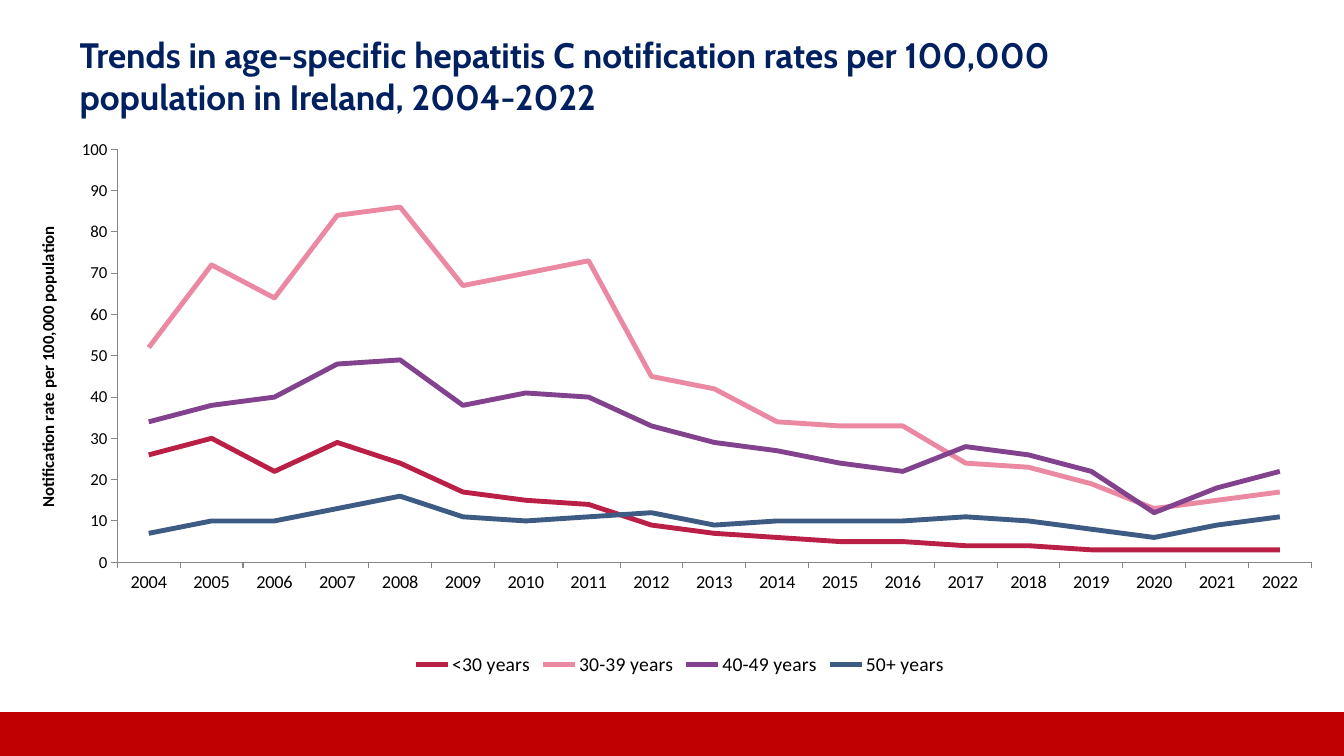
from dataclasses import dataclass

from lxml.etree import SubElement
from pptx import Presentation
from pptx.chart.data import CategoryChartData
from pptx.dml.color import RGBColor
from pptx.enum.chart import XL_CHART_TYPE, XL_LEGEND_POSITION, XL_TICK_MARK
from pptx.enum.shapes import MSO_SHAPE
from pptx.enum.text import MSO_ANCHOR, MSO_AUTO_SIZE, PP_ALIGN
from pptx.oxml.ns import qn
from pptx.util import Inches, Pt

YEARS = [str(year) for year in range(2004, 2023)]
RATES = {
    "<30 years": (26, 30, 22, 29, 24, 17, 15, 14, 9, 7, 6, 5, 5, 4, 4, 3, 3, 3, 3),
    "30-39 years": (52, 72, 64, 84, 86, 67, 70, 73, 45, 42, 34, 33, 33, 24, 23, 19, 13, 15, 17),
    "40-49 years": (34, 38, 40, 48, 49, 38, 41, 40, 33, 29, 27, 24, 22, 28, 26, 22, 12, 18, 22),
    "50+ years": (7, 10, 10, 13, 16, 11, 10, 11, 12, 9, 10, 10, 10, 11, 10, 8, 6, 9, 11),
}


@dataclass(frozen=True)
class Theme:
    title_font: str = "Cabin"
    chart_font: str = "Calibri"
    title: str = "002060"
    text: str = "000000"
    band: str = "C00000"
    axis: str = "868686"
    series: tuple = ("BA1F46", "EB89A3", "82428D", "3E5B84")
    title_size: float = 25.2
    category_size: float = 13
    value_size: float = 12
    legend_size: float = 14
    series_width: float = 3.5


def set_attrs(target, values):
    for name, value in values.items():
        setattr(target, name, value)


def set_font(font, name, size, color, bold=False):
    set_attrs(font, {"name": name, "size": Pt(size), "bold": bold})
    font.color.rgb = RGBColor.from_string(color)


def set_plot_area(chart, x, y, w, h):
    """Fix the inner plot area as fractions of the chart frame."""
    area = chart._chartSpace.chart.plotArea
    for old in area.findall(qn("c:layout")):
        area.remove(old)
    layout = SubElement(area, qn("c:layout"))
    area.insert(0, layout)
    manual = SubElement(layout, qn("c:manualLayout"))
    values = {"layoutTarget": "inner", "xMode": "edge", "yMode": "edge",
              "x": x, "y": y, "w": w, "h": h}
    for tag, value in values.items():
        SubElement(manual, qn(f"c:{tag}")).set("val", str(value))


class SlideBuilder:
    def __init__(self, prs, theme):
        self.theme = theme
        self.s = prs.slides.add_slide(prs.slide_layouts[5])

    def band(self, x, y, w, h):
        sp = self.s.shapes.add_shape(
            MSO_SHAPE.RECTANGLE, Inches(x), Inches(y), Inches(w), Inches(h))
        sp.shadow.inherit = False
        sp.fill.solid()
        sp.fill.fore_color.rgb = RGBColor.from_string(self.theme.band)
        sp.line.color.rgb = RGBColor.from_string(self.theme.band)
        sp.line.width = Pt(2)

    def title(self, text, x, y, w, h):
        sp = self.s.shapes.title
        set_attrs(sp, {"left": Inches(x), "top": Inches(y),
                       "width": Inches(w), "height": Inches(h)})
        tf = sp.text_frame
        set_attrs(tf, {
            "word_wrap": True, "auto_size": MSO_AUTO_SIZE.NONE,
            "vertical_anchor": MSO_ANCHOR.MIDDLE,
            "margin_left": Inches(0.12), "margin_right": Inches(0.12),
            "margin_top": Inches(0.06), "margin_bottom": Inches(0.06)})
        p = tf.paragraphs[0]
        p.alignment = PP_ALIGN.LEFT
        r = p.add_run()
        r.text = text
        set_font(r.font, self.theme.title_font, self.theme.title_size,
                 self.theme.title, True)

    def axis(self, axis, size):
        set_attrs(axis, {"has_major_gridlines": False,
                         "major_tick_mark": XL_TICK_MARK.OUTSIDE,
                         "minor_tick_mark": XL_TICK_MARK.NONE})
        axis.format.line.color.rgb = RGBColor.from_string(self.theme.axis)
        axis.format.line.width = Pt(0.75)
        set_font(axis.tick_labels.font, self.theme.chart_font, size, self.theme.text)

    def value_title(self, axis, text):
        tf = axis.axis_title.text_frame
        tf._txBody.find(qn("a:bodyPr")).set("rot", "-5400000")
        r = tf.paragraphs[0].add_run()
        r.text = text
        set_font(r.font, self.theme.chart_font, self.theme.value_size,
                 self.theme.text, True)

    def line_chart(self, categories, series, value_title, x, y, w, h):
        t = self.theme
        data = CategoryChartData(number_format="0")
        data.categories = categories
        for name, values in series.items():
            data.add_series(name, values)
        chart = self.s.shapes.add_chart(
            XL_CHART_TYPE.LINE, Inches(x), Inches(y), Inches(w), Inches(h), data).chart
        set_font(chart.font, t.chart_font, 10, t.text)
        set_attrs(chart, {"has_title": False, "has_legend": True})
        set_attrs(chart.legend, {"position": XL_LEGEND_POSITION.BOTTOM,
                                 "include_in_layout": False})
        set_font(chart.legend.font, t.chart_font, t.legend_size, t.text)
        chart.plots[0].vary_by_categories = False
        for line, color in zip(chart.plots[0].series, t.series):
            line.smooth = False
            line.format.line.color.rgb = RGBColor.from_string(color)
            line.format.line.width = Pt(t.series_width)
        self.axis(chart.category_axis, t.category_size)
        self.axis(chart.value_axis, t.value_size)
        set_attrs(chart.value_axis, {"minimum_scale": 0, "maximum_scale": 100,
                                     "major_unit": 10})
        self.value_title(chart.value_axis, value_title)
        set_plot_area(chart, 0.065, 0.028, 0.923, 0.756)


def main():
    prs = Presentation()
    prs.slide_width, prs.slide_height = Inches(13.33), Inches(7.5)
    slide = SlideBuilder(prs, Theme())
    slide.band(0, 7.08, 13.33, 0.42)
    slide.title("Trends in age-specific hepatitis C notification rates per 100,000 "
                "population in Ireland, 2004-2022", 0.67, 0.33, 10.92, 0.83)
    slide.line_chart(YEARS, RATES, "Notification rate per 100,000 population",
                     0.33, 1.33, 12.83, 5.42)
    prs.save("out.pptx")


if __name__ == "__main__":
    main()
